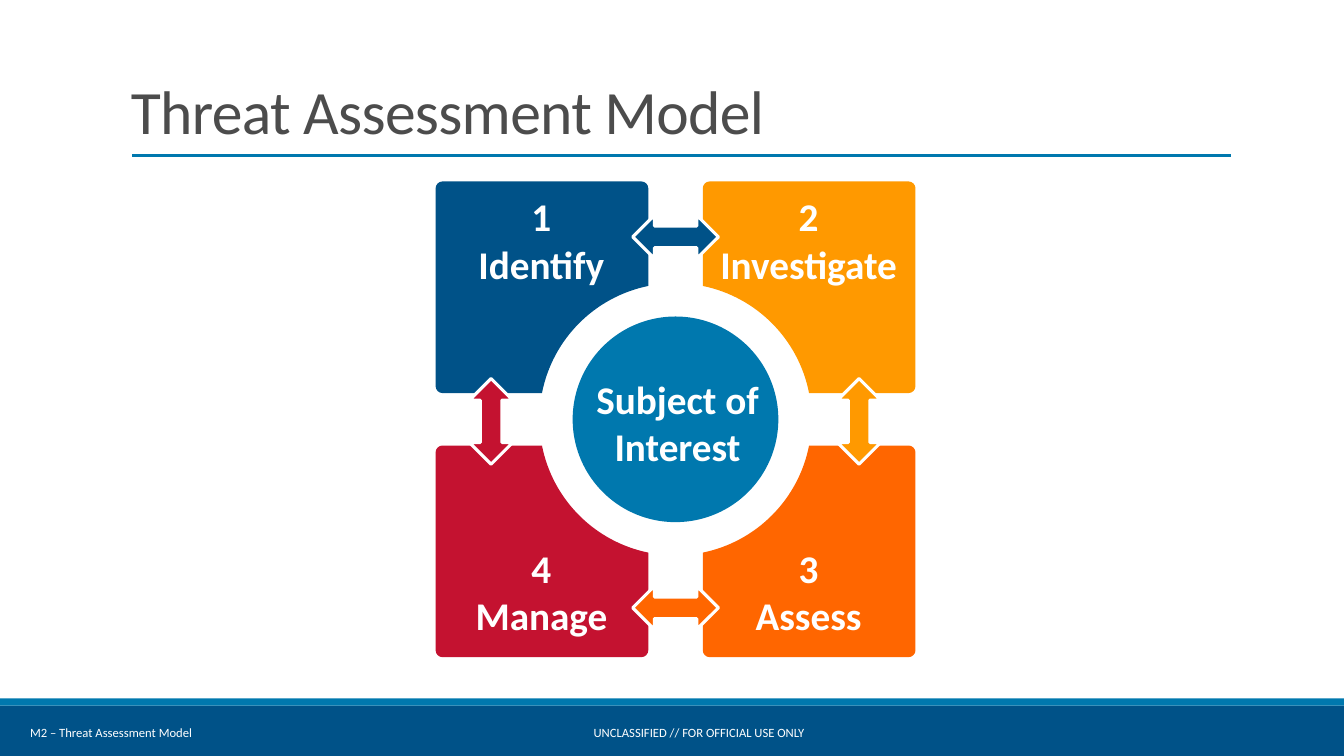
from math import acos, asin, cos, degrees, radians, sin, tan

from lxml.etree import SubElement
from pptx import Presentation
from pptx.dml.color import RGBColor
from pptx.enum.shapes import MSO_CONNECTOR as Connector
from pptx.enum.shapes import MSO_SHAPE as Shape
from pptx.enum.text import MSO_ANCHOR as Anchor
from pptx.enum.text import PP_ALIGN as Align
from pptx.oxml.ns import qn
from pptx.util import Pt

PX = 9144  # EMU per px, 100 px to the inch
WIDTH, HEIGHT = 1333, 750
FONT = "Calibri"
NAVY, BLUE, WHITE, GRAY = "005288", "0078AE", "FFFFFF", "4C4C4C"
AMBER, ORANGE, RED = "FF9900", "FF6600", "C41230"

# Wheel geometry: distances are measured from the centre
CENTER_X, CENTER_Y = 670, 416
HUB_RADIUS, RING_RADIUS, CORNER = 102, 135, 7
NEAR_X, NEAR_Y, FAR_X, FAR_Y = 27, 26, 238, 236
ARROW_LENGTH, ARROW_HEIGHT = 85, 43

# Name, fill, horizontal side, vertical side, label top
STAGES = [
    ("Identify", NAVY, -1, -1, 185),
    ("Investigate", AMBER, 1, -1, 185),
    ("Assess", ORANGE, 1, 1, 534),
    ("Manage", RED, -1, 1, 534),
]

# Centre x, centre y, rotation, fill
ARROWS = [
    (670, 235, 180, NAVY),
    (670, 603, 180, ORANGE),
    (487, 418, 90, RED),
    (852, 418, 90, AMBER),
]


def emu(*lengths):
    return [round(length * PX) for length in lengths]


def color(hex_code):
    return RGBColor.from_string(hex_code)


def paint(shape, fill, outline=None):
    shape.shadow.inherit = False
    shape.fill.solid()
    shape.fill.fore_color.rgb = color(fill)
    if outline:
        shape.line.color.rgb = color(outline)
        shape.line.width = Pt(2.25)
    else:
        shape.line.fill.background()


def add_block(slide, preset, box, fill, outline=None):
    block = slide.shapes.add_shape(preset, *emu(*box))
    paint(block, fill, outline)
    return block


def add_text(slide, box, lines, size, ink=WHITE, bold=False, align=Align.LEFT,
             anchor=Anchor.MIDDLE, wrap=True, leading=None, tracking=None):
    frame = slide.shapes.add_textbox(*emu(*box)).text_frame
    frame.word_wrap = wrap
    frame.vertical_anchor = anchor
    for index, line in enumerate(lines):
        paragraph = frame.add_paragraph() if index else frame.paragraphs[0]
        paragraph.alignment = align
        if leading:
            paragraph.line_spacing = leading
        run = paragraph.add_run()
        run.text = line
        run.font.name = FONT
        run.font.size = Pt(size)
        run.font.bold = bold
        run.font.color.rgb = color(ink)
        if tracking:
            run.font._element.set("spc", str(tracking))


def add_rule(slide, left, right, y):
    rule = slide.shapes.add_connector(Connector.STRAIGHT, *emu(left, y, right, y))
    rule.line.color.rgb = color(BLUE)
    rule.line.width = Pt(2.25)
    SubElement(rule._element.spPr, qn("a:effectLst"))


def arc(x, y, radius, start, end):
    """Start, two handles and end of one Bezier curve along a circle."""
    a, b = radians(start), radians(end)
    pull = 4 / 3 * tan((b - a) / 4)
    unit = [
        (cos(a), sin(a)),
        (cos(a) - pull * sin(a), sin(a) + pull * cos(a)),
        (cos(b) + pull * sin(b), sin(b) - pull * cos(b)),
        (cos(b), sin(b)),
    ]
    return [(x + radius * u, y + radius * v) for u, v in unit]


def bend_corners(tile):
    """In every four segments, keep the line and merge the rest into a curve."""
    segments = list(tile._element.iter(qn("a:lnTo")))
    for i in range(0, len(segments), 4):
        curve, *rest = segments[i + 1:i + 4]
        curve.tag = qn("a:cubicBezTo")
        for segment in rest:
            curve.append(segment[0])
            segment.getparent().remove(segment)


def add_tile(slide, fill, side_x, side_y):
    left, right = NEAR_X + CORNER, FAR_X - CORNER
    low, high = NEAR_Y + CORNER, FAR_Y - CORNER
    ring_start = degrees(asin(NEAR_Y / RING_RADIUS))
    ring_end = degrees(acos(NEAR_X / RING_RADIUS))
    # Three rounded corners, then the curve around the hub
    outline = (
        arc(left, high, CORNER, 180, 90)
        + arc(right, high, CORNER, 90, 0)
        + arc(right, low, CORNER, 0, -90)
        + arc(0, 0, RING_RADIUS, ring_start, ring_end)
    )
    points = [emu(CENTER_X + side_x * x, CENTER_Y + side_y * y) for x, y in outline]
    builder = slide.shapes.build_freeform(*points[-1])
    builder.add_line_segments(points, close=True)
    tile = builder.convert_to_shape()
    bend_corners(tile)
    paint(tile, fill)


def add_arrow(slide, x, y, rotation, fill):
    box = (x - ARROW_LENGTH / 2, y - ARROW_HEIGHT / 2, ARROW_LENGTH, ARROW_HEIGHT)
    arrow = add_block(slide, Shape.LEFT_RIGHT_ARROW, box, fill, WHITE)
    arrow.rotation = rotation


def main():
    deck = Presentation()
    deck.slide_width, deck.slide_height = emu(WIDTH, HEIGHT)
    slide = deck.slides.add_slide(deck.slide_layouts[6])

    # Footer bands
    add_block(slide, Shape.RECTANGLE, (0, 700, WIDTH, 50), NAVY)
    add_block(slide, Shape.RECTANGLE, (0, 693, WIDTH, 7), BLUE)
    add_text(slide, (579, 714, 234, 25), ["UNCLASSIFIED // FOR OFFICIAL USE ONLY"],
             9, wrap=False)

    # Title
    add_rule(slide, 131, 1221, 154)
    add_text(slide, (120, 31, 1100, 120), ["Threat Assessment Model"], 44, GRAY,
             anchor=Anchor.BOTTOM, leading=0.85, tracking=-50)

    # Hub
    diameter = 2 * HUB_RADIUS
    hub_box = (CENTER_X - HUB_RADIUS, CENTER_Y - HUB_RADIUS, diameter, diameter)
    add_block(slide, Shape.OVAL, hub_box, BLUE)

    # Stage tiles and their labels
    for number, (name, fill, side_x, side_y, top) in enumerate(STAGES, 1):
        add_tile(slide, fill, side_x, side_y)
        label_left = 432 if side_x < 0 else 697
        add_text(slide, (label_left, top, 210, 106), [str(number), name], 28,
                 bold=True, align=Align.CENTER)
    add_text(slide, (567, 367, 210, 104), ["Subject of Interest"], 28,
             bold=True, align=Align.CENTER)

    # Arrows between stages
    for arrow in ARROWS:
        add_arrow(slide, *arrow)

    # Module label
    add_text(slide, (20, 707, 527, 40), ["M2 – Threat Assessment Model"], 9)

    deck.save("out.pptx")


if __name__ == "__main__":
    main()
